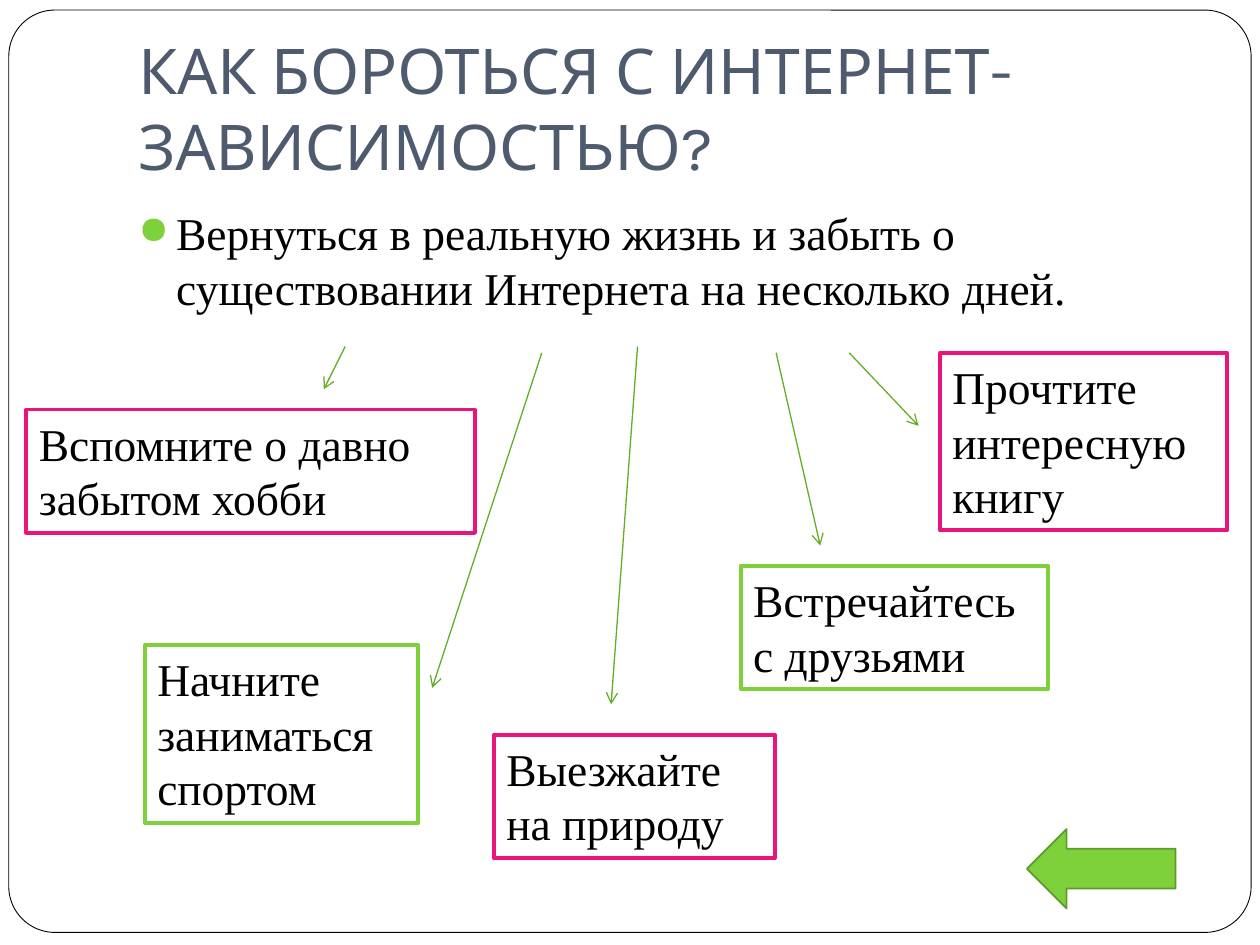
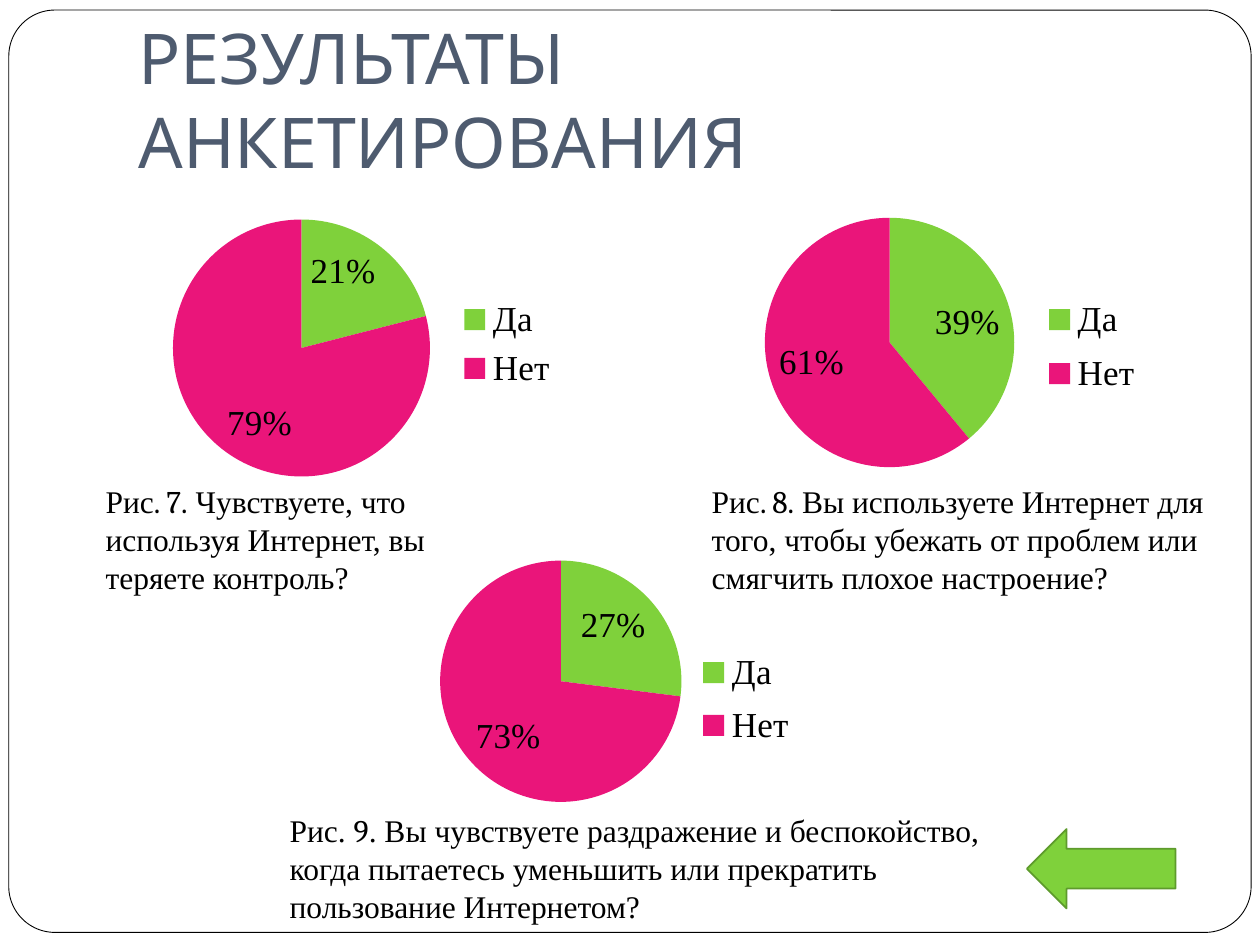
from dataclasses import dataclass

from lxml import etree
from pptx import Presentation
from pptx.chart.data import CategoryChartData
from pptx.dml.color import RGBColor
from pptx.enum import chart as charts, shapes, text
from pptx.oxml import ns
from pptx.util import Inches, Pt


@dataclass(frozen=True)
class Theme:
    ink: str = "000000"
    paper: str = "FFFFFF"
    slate: str = "4E5B6F"
    green: str = "7FD13B"
    pink: str = "EA157A"
    arrow: str = "65AD29"
    edge: str = "5E9B2C"
    head: str = "Karla"
    body: str = "Times New Roman"
    digit: str = "Cambria"
    main: int = 26
    label: int = 20
    note: int = 18


T = Theme()


def rgb(code):
    return RGBColor.from_string(code)


def paint(shape, fill, line, width):
    shape.fill.solid()
    shape.fill.fore_color.rgb = rgb(fill)
    shape.line.color.rgb = rgb(line)
    shape.line.width = Pt(width)


def style(font, size, color=T.ink, name=T.body):
    font.size, font.name = Pt(size), name
    font.color.rgb = rgb(color)


def add_shape(slide, kind, at, fill, line, width):
    shape = slide.shapes.add_shape(kind, *map(Inches, at))
    shape.shadow.inherit = False
    paint(shape, fill, line, width)
    return shape


def add_text(slide, at, words, size, color=T.ink, name=T.body):
    box = slide.shapes.add_textbox(*map(Inches, at))
    box.text_frame.word_wrap = True
    para = box.text_frame.paragraphs[0]
    para.text = words
    style(para.font, size, color, name)
    return box


def add_title(slide, words, size):
    frame = add_text(slide, (1, 0.3, 8.5, 1.25), words, size, T.slate, T.head).text_frame
    frame.vertical_anchor = text.MSO_ANCHOR.BOTTOM
    frame.margin_bottom = Inches(0.1)


def add_bullet(slide, at, words):
    para = add_text(slide, at, words, T.main).text_frame.paragraphs[0]
    para.space_before = Pt(5.8)
    props = para._p.get_or_add_pPr()
    props.set("marL", str(Inches(0.3)))
    props.set("indent", str(Inches(-0.3)))
    color = etree.SubElement(props, ns.qn("a:buClr"))
    etree.SubElement(color, ns.qn("a:srgbClr"), val=T.green)
    etree.SubElement(props, ns.qn("a:buSzPct"), val="85000")
    etree.SubElement(props, ns.qn("a:buChar"), char="●")


def add_tip(slide, at, words, line):
    paint(add_text(slide, at, words, T.main), T.paper, line, 2.25)


def add_arrow(slide, start, end):
    line = slide.shapes.add_connector(
        shapes.MSO_CONNECTOR.STRAIGHT, *map(Inches, (*start, *end)))
    line.line.color.rgb = rgb(T.arrow)
    line.line.width = Pt(0.75)
    etree.SubElement(line.line._get_or_add_ln(), ns.qn("a:tailEnd"), type="arrow")
    etree.SubElement(line._element.spPr, ns.qn("a:effectLst"))


def add_note(slide, at, parts):
    """Caption whose parts switch between the body and the digit font."""
    para = add_text(slide, at, "", T.note).text_frame.paragraphs[0]
    for words, name in zip(parts, (T.body, T.digit, T.body)):
        run = para.add_run()
        run.text = words
        style(run.font, T.note, name=name)


def set_layout(element, spot, inner=False):
    """Place a plot or legend by fractions of the chart: left, top, width, height."""
    for old in element.findall(ns.qn("c:layout")):
        element.remove(old)
    layout = etree.Element(ns.qn("c:layout"))
    manual = etree.SubElement(layout, ns.qn("c:manualLayout"))
    pairs = [("layoutTarget", "inner")] if inner else []
    pairs += [("xMode", "edge"), ("yMode", "edge"), *zip("xywh", map(str, spot))]
    for tag, val in pairs:
        etree.SubElement(manual, ns.qn("c:" + tag), val=val)
    element.insert(0 if inner else 1, layout)


def add_pie(slide, at, yes, plot, key):
    data = CategoryChartData()
    data.categories = ["Да", "Нет"]
    data.add_series("Series 1", (yes, 100 - yes))
    chart = slide.shapes.add_chart(
        charts.XL_CHART_TYPE.PIE, *map(Inches, at), data).chart
    style(chart.font, 10)
    chart.has_title = False
    chart.has_legend = True
    legend = chart.legend
    legend.position = charts.XL_LEGEND_POSITION.RIGHT
    legend.include_in_layout = False
    style(legend.font, T.label)
    pie = chart.plots[0]
    pie.vary_by_categories = True
    pie.has_data_labels = True
    labels = pie.data_labels
    labels.show_percentage, labels.show_value = True, False
    labels.number_format, labels.number_format_is_linked = "0%", False
    labels.position = charts.XL_LABEL_POSITION.INSIDE_END
    style(labels.font, T.label)
    for i, color in enumerate((T.green, T.pink)):
        fill = pie.series[0].points[i].format.fill
        fill.solid()
        fill.fore_color.rgb = rgb(color)
    set_layout(chart._chartSpace.chart.plotArea, plot, inner=True)
    set_layout(legend._element, key)


def add_slide(deck, title, size):
    slide = deck.slides.add_slide(deck.slide_layouts[6])
    kinds = shapes.MSO_SHAPE
    frame = add_shape(slide, kinds.ROUNDED_RECTANGLE, (0.07, 0.08, 9.86, 7.32),
                      T.paper, T.ink, 0.5)
    frame.adjustments[0] = 0.05
    add_title(slide, title, size)
    add_shape(slide, kinds.LEFT_ARROW, (8.15, 6.58, 1.18, 0.63), T.green, T.edge, 1)
    return slide


def add_advice(deck):
    slide = add_slide(deck, "КАК БОРОТЬСЯ С ИНТЕРНЕТ-ЗАВИСИМОСТЬЮ?", 36)
    add_bullet(slide, (1, 1.58, 8.5, 1.1),
               "Вернуться в реальную жизнь и забыть о существовании Интернета "
               "на несколько дней.")
    tips = [
        ((5.88, 4.49, 2.44, 0.98), "Встречайтесь с друзьями", T.green),
        ((7.46, 2.8, 2.28, 1.41), "Прочтите интересную книгу", T.pink),
        ((0.21, 3.25, 3.56, 0.98), "Вспомните о давно забытом хобби", T.pink),
        ((1.15, 5.12, 2.17, 1.41), "Начните заниматься спортом", T.green),
        ((3.92, 5.83, 2.23, 0.98), "Выезжайте на природу", T.pink),
    ]
    for tip in tips:
        add_tip(slide, *tip)
    arrows = [
        ((5.06, 2.75), (4.85, 5.59)),
        ((6.16, 2.8), (6.51, 4.33)),
        ((6.74, 2.8), (7.29, 3.38)),
        ((2.74, 2.75), (2.57, 3.09)),
        ((4.3, 2.8), (3.43, 5.46)),
    ]
    for ends in arrows:
        add_arrow(slide, *ends)


def add_survey(deck):
    slide = add_slide(deck, "РЕЗУЛЬТАТЫ АНКЕТИРОВАНИЯ", 40)
    pies = [
        ((0.2, 1.52, 5.1, 3.27), 21, (0.23, 0.05, 0.4, 0.66), (0.66, 0.24, 0.18, 0.26)),
        ((4.84, 1.39, 5.35, 3.24), 39, (0.23, 0.1, 0.37, 0.62), (0.63, 0.27, 0.17, 0.3)),
        ((2.01, 4.23, 5.25, 3.14), 27, (0.28, 0.07, 0.37, 0.61), (0.66, 0.27, 0.17, 0.3)),
    ]
    for pie in pies:
        add_pie(slide, *pie)
    notes = [
        ((2.2, 6.39, 5.71, 1.01),
         ("Рис. ", "9", ". Вы чувствуете раздражение и беспокойство, когда "
          "пытаетесь уменьшить или прекратить пользование Интернетом?")),
        ((5.55, 3.78, 4.47, 1.01),
         ("Рис", ". 8.", " Вы используете Интернет для того, чтобы убежать "
          "от проблем или смягчить плохое настроение?")),
        ((0.74, 3.78, 3.33, 1.01),
         ("Рис", ". 7.", " Чувствуете, что используя Интернет, вы теряете контроль?")),
    ]
    for note in notes:
        add_note(slide, *note)


def main():
    deck = Presentation()
    deck.slide_width, deck.slide_height = Inches(10), Inches(7.5)
    add_advice(deck)
    add_survey(deck)
    deck.save("out.pptx")


if __name__ == "__main__":
    main()
